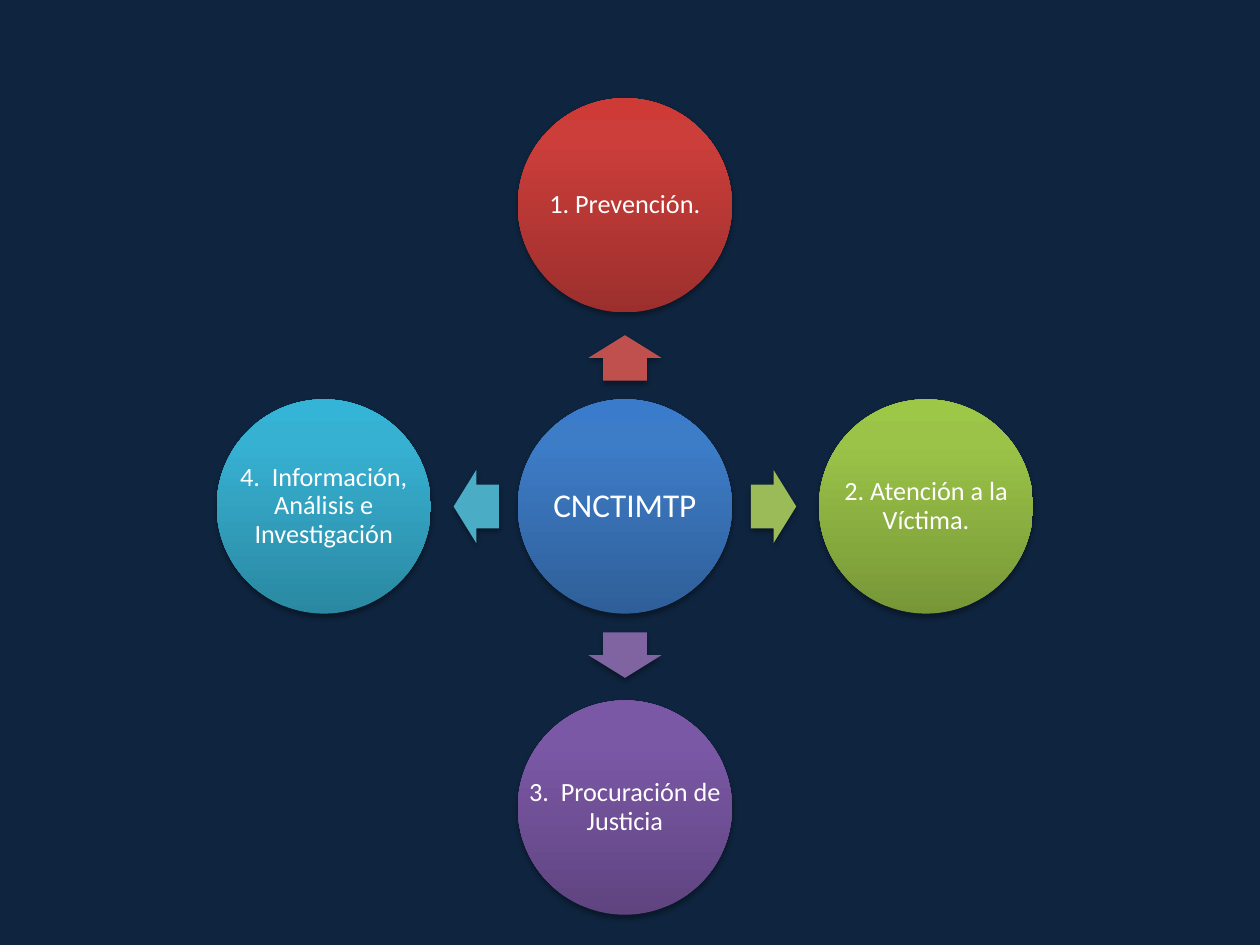
"""Draw a hub circle with four arrows pointing to four topic circles."""
from copy import deepcopy
from lxml.etree import SubElement
from pptx import Presentation
from pptx.dml.color import RGBColor
from pptx.enum.shapes import MSO_SHAPE
from pptx.enum.text import MSO_ANCHOR, PP_ALIGN
from pptx.oxml.ns import qn
from pptx.util import Inches, Pt

deck = Presentation()
deck.slide_width, deck.slide_height = Inches(10), Inches(7.5)
wide, high = deck.slide_width, deck.slide_height
slide = deck.slides.add_slide(deck.slide_layouts[6])


def hue(code):
    return RGBColor.from_string(code)


def draw(kind, mid_x, mid_y, w, h):
    item = slide.shapes.add_shape(
        kind, int(mid_x - w / 2), int(mid_y - h / 2), int(w), int(h))
    item.line.fill.background()
    item.shadow.inherit = False
    glow = SubElement(item._element.spPr.find(qn("a:effectLst")), qn("a:outerShdw"),
                      blurRad=str(Pt(3.1)), dist=str(Pt(1.8)), dir="5400000", rotWithShape="0")
    tint = SubElement(glow, qn("a:srgbClr"), val="000000")
    SubElement(tint, qn("a:alpha"), val="35000")
    return item


back = slide.background.fill
back.solid()
back.fore_color.rgb = hue("0F243E")

hub_x, hub_y = wide * 0.496, high * 0.536
step, reach, size = wide * 0.239, wide * 0.118, wide * 0.17

nodes = [
    ("CNCTIMTP", 19, 0, 0, None, None, ("2F5F99", "3D7CC7", "3A7CCB")),
    ("1. Prevención.", 15, 0, -1, 270, "C0504D", ("9C2F2D", "CB3E3A", "CE3B37")),
    ("2. Atención a la Víctima.", 15, 1, 0, 0, "9BBB59", ("779737", "9BC348", "9DC746")),
    ("3.  Procuración de Justicia", 15, 0, 1, 90, "8064A2", ("5F4480", "7B58A6", "7C57A8")),
    ("4.  Información, Análisis e Investigación", 15, -1, 0, 180, "4BACC6",
     ("2A88A2", "37B1D2", "34B4D6")),
]

for words, points, col, row, turn, plain, shades in nodes:
    if plain:
        arrow = draw(MSO_SHAPE.RIGHT_ARROW, hub_x + col * reach, hub_y + row * reach,
                     wide * 0.036, wide * 0.058)
        arrow.adjustments[0], arrow.adjustments[1] = 0.6, 0.5
        arrow.rotation = turn
        arrow.fill.solid()
        arrow.fill.fore_color.rgb = hue(plain)

    disc = draw(MSO_SHAPE.OVAL, hub_x + col * step, hub_y + row * step, size, size)
    disc.fill.gradient()
    disc.fill.gradient_angle = 90
    stops = disc._element.spPr.find(qn("a:gradFill")).find(qn("a:gsLst"))
    stops.append(deepcopy(stops[0]))
    for stop, place, shade in zip(disc.fill.gradient_stops, (0, 0.8, 1), shades):
        stop.position = place
        stop.color.rgb = hue(shade)

    box = slide.shapes.add_textbox(disc.left, disc.top, disc.width, disc.height)
    frame = box.text_frame
    frame.word_wrap = True
    frame.vertical_anchor = MSO_ANCHOR.MIDDLE
    frame.margin_left = frame.margin_right = int(wide * 0.002)
    frame.margin_top = frame.margin_bottom = int(wide * 0.002)
    para = frame.paragraphs[0]
    para.alignment = PP_ALIGN.CENTER
    para.line_spacing = 0.9
    run = para.add_run()
    run.text = words
    run.font.name = "Calibri"
    run.font.size = Pt(points)
    run.font.color.rgb = hue("FFFFFF")

deck.save("out.pptx")
